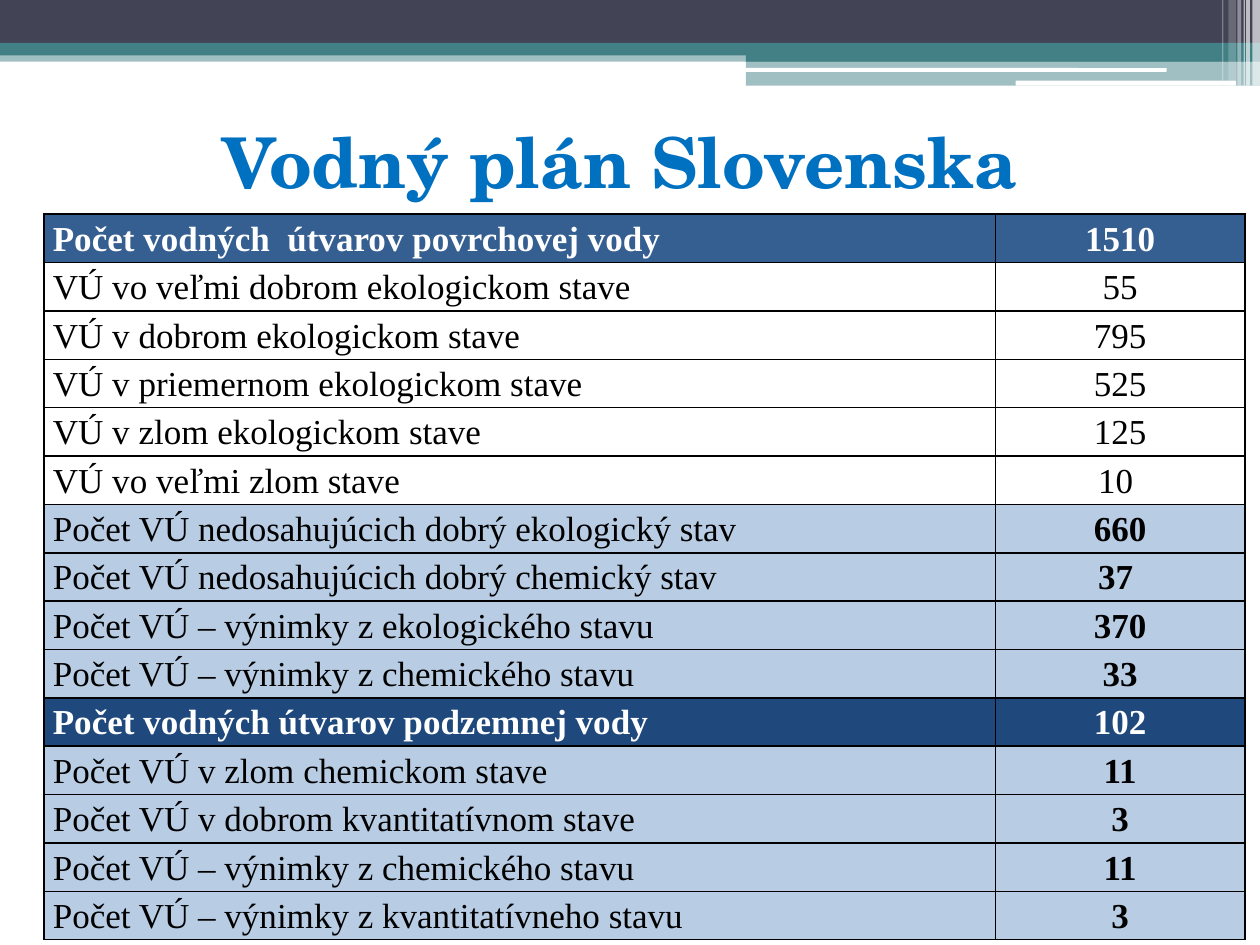
from lxml import etree
from pptx import Presentation
from pptx.dml.color import RGBColor
from pptx.enum.shapes import MSO_SHAPE
from pptx.enum.text import MSO_ANCHOR, PP_ALIGN
from pptx.oxml.ns import qn
from pptx.util import Inches, Pt

RECT, ROUNDED = MSO_SHAPE.RECTANGLE, MSO_SHAPE.ROUNDED_RECTANGLE
LEFT, CENTER = PP_ALIGN.LEFT, PP_ALIGN.CENTER
MIDDLE = MSO_ANCHOR.MIDDLE

COLORS = {
    "white": "FFFFFF", "black": "000000", "slate": "424456", "teal": "438086",
    "title": "0070C0", "surface": "365F91", "ground": "1F497D", "pale": "B8CCE4",
}
TITLE_FONT, TABLE_FONT = "TeX Gyre Schola", "Times New Roman"

# Row kinds: fill, text colour, bold label, bold value
ROW_STYLES = {
    "surface": ("surface", "white", True, True),
    "ground": ("ground", "white", True, True),
    "state": (None, "black", False, False),
    "shortfall": ("pale", "black", False, True),
}
WATER_BODIES = [
    ("surface", "Počet vodných  útvarov povrchovej vody", "1510"),
    ("state", "VÚ vo veľmi dobrom ekologickom stave", "55"),
    ("state", "VÚ v dobrom ekologickom stave", "795"),
    ("state", "VÚ v priemernom ekologickom stave", "525"),
    ("state", "VÚ v zlom ekologickom stave", "125"),
    ("state", "VÚ vo veľmi zlom stave", "10 "),
    ("shortfall", "Počet VÚ nedosahujúcich dobrý ekologický stav", "660"),
    ("shortfall", "Počet VÚ nedosahujúcich dobrý chemický stav", "37 "),
    ("shortfall", "Počet VÚ – výnimky z ekologického stavu", "370"),
    ("shortfall", "Počet VÚ – výnimky z chemického stavu", "33"),
    ("ground", "Počet vodných útvarov podzemnej vody", "102"),
    ("shortfall", "Počet VÚ v zlom chemickom stave", "11"),
    ("shortfall", "Počet VÚ v dobrom kvantitatívnom stave", "3"),
    ("shortfall", "Počet VÚ – výnimky z chemického stavu", "11"),
    ("shortfall", "Počet VÚ – výnimky z kvantitatívneho stavu", "3"),
]

# Header bands, back to front: shape, left, top, width, height, colour, opacity
BANDS = [
    (RECT, 0, 4, 100, 0.9, "teal", 50),
    (RECT, 0, 0, 100, 3.4, "slate", 100),
    (RECT, 0, 3.4, 100, 1, "teal", 100),
    (RECT, 59.2, 3.9, 40.8, 1, "teal", 100),
    (RECT, 59.2, 4.8, 40.8, 2, "teal", 50),
    (ROUNDED, 59.1, 5.4, 33.5, 0.3, "white", 100),
    (ROUNDED, 80.6, 6.4, 17.5, 0.4, "white", 100),
]
# Light stripes at the right edge: left, width, height, opacity
STRIPES = [
    (99.4, 0.6, 6.8, 65), (98.9, 0.3, 6.8, 65), (98.7, 0.1, 6.8, 60),
    (98.2, 0.3, 6.8, 40), (97.5, 0.6, 6.4, 20), (97, 0.1, 6.4, 30),
]


class SlideBuilder:
    """Places elements on a grid of 100 columns by 75 rows."""

    def __init__(self, deck):
        self.deck = deck
        self.slide = deck.slides.add_slide(deck.slide_layouts[6])

    def place(self, left, top, width, height):
        column, row = self.deck.slide_width / 100, self.deck.slide_height / 75
        return [round(size) for size in
                (left * column, top * row, width * column, height * row)]

    def color(self, name):
        return RGBColor.from_string(COLORS[name])

    def band(self, kind, left, top, width, height, color, opacity):
        shape = self.slide.shapes.add_shape(kind, *self.place(left, top, width, height))
        shape.shadow.inherit = False
        shape.line.fill.background()
        shape.fill.solid()
        shape.fill.fore_color.rgb = self.color(color)
        if opacity < 100:
            tone = shape.element.find(".//" + qn("a:srgbClr"))
            etree.SubElement(tone, qn("a:alpha"), val=str(opacity * 1000))

    def set_text(self, frame, text, font, size, color, bold, align):
        frame.text = text
        para = frame.paragraphs[0]
        para.alignment = align
        style = para.runs[0].font
        style.name, style.size, style.bold = font, Pt(size), bold
        style.color.rgb = self.color(color)
        return para

    def title(self, text, *area):
        box = self.slide.shapes.add_textbox(*self.place(*area))
        frame = box.text_frame
        frame.word_wrap = True
        frame.vertical_anchor = MIDDLE
        self.set_text(frame, text, TITLE_FONT, 40, "title", True, CENTER)

    def borders(self, cell):
        properties = cell._tc.get_or_add_tcPr()
        for side in ("lnL", "lnR", "lnT", "lnB"):
            line = etree.SubElement(properties, qn("a:" + side), w=str(Pt(1)))
            fill = etree.SubElement(line, qn("a:solidFill"))
            etree.SubElement(fill, qn("a:srgbClr"), val=COLORS["black"])

    def cell(self, cell, text, fill, color, bold, align):
        cell.margin_left = cell.margin_right = Inches(0.07)
        cell.margin_top = cell.margin_bottom = 0
        self.borders(cell)
        if fill:
            cell.fill.solid()
            cell.fill.fore_color.rgb = self.color(fill)
        else:
            cell.fill.background()
        para = self.set_text(cell.text_frame, text, TABLE_FONT, 20, color, bold, align)
        para.line_spacing = 1.15

    def table(self, rows, left, top, widths, row_height):
        area = self.place(left, top, sum(widths), row_height * len(rows))
        table = self.slide.shapes.add_table(len(rows), len(widths), *area).table
        for column, width in zip(table.columns, widths):
            column.width = self.place(0, 0, width, 0)[2]
        for index, (kind, label, value) in enumerate(rows):
            fill, color, bold_label, bold_value = ROW_STYLES[kind]
            self.cell(table.cell(index, 0), label, fill, color, bold_label, LEFT)
            self.cell(table.cell(index, 1), value, fill, color, bold_value, CENTER)


def main():
    deck = Presentation()
    deck.slide_width, deck.slide_height = Inches(10), Inches(7.5)
    builder = SlideBuilder(deck)

    # Header decoration
    for band in BANDS:
        builder.band(*band)
    for left, width, height, opacity in STRIPES:
        builder.band(RECT, left, 0, width, height, "white", opacity)

    # Title and table of water bodies
    builder.title("Vodný plán Slovenska ", 5, 7.6, 90, 10.2)
    builder.table(WATER_BODIES, 3.5, 17, (75.5, 19.8), 3.75)

    deck.save("out.pptx")


if __name__ == "__main__":
    main()
